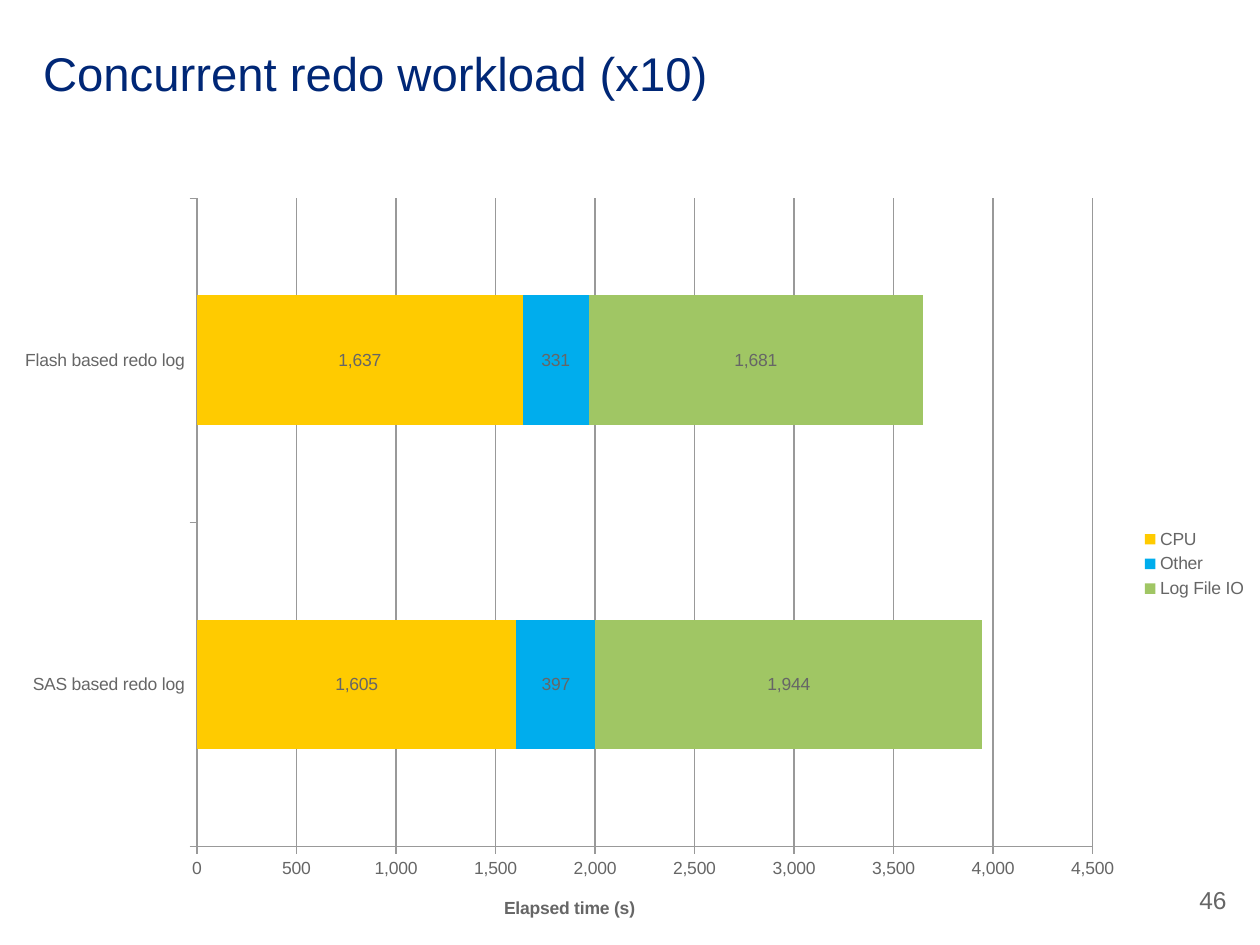
from dataclasses import dataclass

from pptx import Presentation
from pptx.chart.data import CategoryChartData
from pptx.dml.color import RGBColor
from pptx.enum.chart import XL_CHART_TYPE as ChartType
from pptx.enum.chart import XL_LABEL_POSITION as LabelPosition
from pptx.enum.chart import XL_LEGEND_POSITION as LegendPosition
from pptx.enum.chart import XL_TICK_MARK as TickMark
from pptx.enum.text import MSO_ANCHOR as Anchor
from pptx.enum.text import PP_ALIGN as Align
from pptx.util import Emu, Pt

EMU_PER_PX = 914400 / 126
FONT = "Arial"
NUMBER_FORMAT = "#,##0"
COLORS = {
    "title": "002776",
    "text": "666666",
    "grid": "999999",
    "cpu": "FFCB00",
    "other": "00ADED",
    "log": "A0C664",
}


@dataclass(frozen=True)
class Box:
    left: int
    top: int
    width: int
    height: int

    def emu(self) -> tuple:
        return tuple(px(v) for v in (self.left, self.top, self.width, self.height))


@dataclass(frozen=True)
class Workload:
    name: str
    seconds: tuple
    color: str


LOG_TYPES = ("SAS based redo log", "Flash based redo log")
WORKLOADS = (
    Workload("CPU", (1605, 1637), "cpu"),
    Workload("Other", (397, 331), "other"),
    Workload("Log File IO", (1944, 1681), "log"),
)


def px(value: int) -> Emu:
    return Emu(round(value * EMU_PER_PX))


def rgb(name: str) -> RGBColor:
    return RGBColor.from_string(COLORS[name])


def style_font(font, size: float, color: str, bold: bool = False) -> None:
    font.name = FONT
    font.size = Pt(size)
    font.bold = bold
    font.color.rgb = rgb(color)


def write(frame, text: str, size: float, color: str) -> None:
    paragraph = frame.paragraphs[0]
    paragraph.alignment = Align.LEFT
    run = paragraph.add_run()
    run.text = text
    style_font(run.font, size, color)


def add_heading(slide, box: Box, text: str) -> None:
    heading = slide.shapes.title
    heading.left, heading.top, heading.width, heading.height = box.emu()
    frame = heading.text_frame
    frame.margin_left = 0
    frame.vertical_anchor = Anchor.MIDDLE
    frame.word_wrap = True
    write(frame, text, 27, "title")


def add_page_number(slide, box: Box, text: str) -> None:
    frame = slide.shapes.add_textbox(*box.emu()).text_frame
    frame.word_wrap = True
    write(frame, text, 14, "text")


def style_axis(axis) -> None:
    axis.major_tick_mark = TickMark.OUTSIDE
    axis.minor_tick_mark = TickMark.NONE
    axis.format.line.color.rgb = rgb("grid")
    axis.format.line.width = Pt(0.75)
    style_font(axis.tick_labels.font, 10, "text")


def style_series(series, workload: Workload) -> None:
    series.format.fill.solid()
    series.format.fill.fore_color.rgb = rgb(workload.color)
    labels = series.data_labels
    labels.show_value = True
    labels.number_format = NUMBER_FORMAT
    labels.number_format_is_linked = False
    labels.position = LabelPosition.CENTER
    style_font(labels.font, 10, "text")


def add_elapsed_chart(slide, box: Box) -> None:
    data = CategoryChartData(number_format=NUMBER_FORMAT)
    data.categories = LOG_TYPES
    for workload in WORKLOADS:
        data.add_series(workload.name, workload.seconds)
    chart = slide.shapes.add_chart(ChartType.BAR_STACKED, *box.emu(), data).chart
    chart.has_title = False
    style_font(chart.font, 10, "text")

    bars = chart.plots[0]
    bars.gap_width = 150
    bars.overlap = 100
    bars.vary_by_categories = False
    for series, workload in zip(bars.series, WORKLOADS):
        style_series(series, workload)

    style_axis(chart.category_axis)
    elapsed = chart.value_axis
    style_axis(elapsed)
    elapsed.minimum_scale, elapsed.maximum_scale, elapsed.major_unit = 0, 4500, 500
    elapsed.tick_labels.number_format = NUMBER_FORMAT
    elapsed.tick_labels.number_format_is_linked = False
    elapsed.has_major_gridlines = True
    elapsed.major_gridlines.format.line.color.rgb = rgb("grid")
    elapsed.major_gridlines.format.line.width = Pt(0.75)
    caption = elapsed.axis_title.text_frame.paragraphs[0].add_run()
    caption.text = "Elapsed time (s)"
    style_font(caption.font, 10, "text", bold=True)

    chart.has_legend = True
    chart.legend.position = LegendPosition.RIGHT
    chart.legend.include_in_layout = False
    style_font(chart.legend.font, 10, "text")


def main() -> None:
    deck = Presentation()
    deck.slide_width, deck.slide_height = px(1260), px(945)
    slide = deck.slides.add_slide(deck.slide_layouts[5])
    add_page_number(slide, Box(1187, 879, 73, 63), "46")
    add_heading(slide, Box(43, 35, 1072, 76), "Concurrent redo workload (x10)")
    add_elapsed_chart(slide, Box(0, 183, 1260, 762))
    deck.save("out.pptx")


if __name__ == "__main__":
    main()
